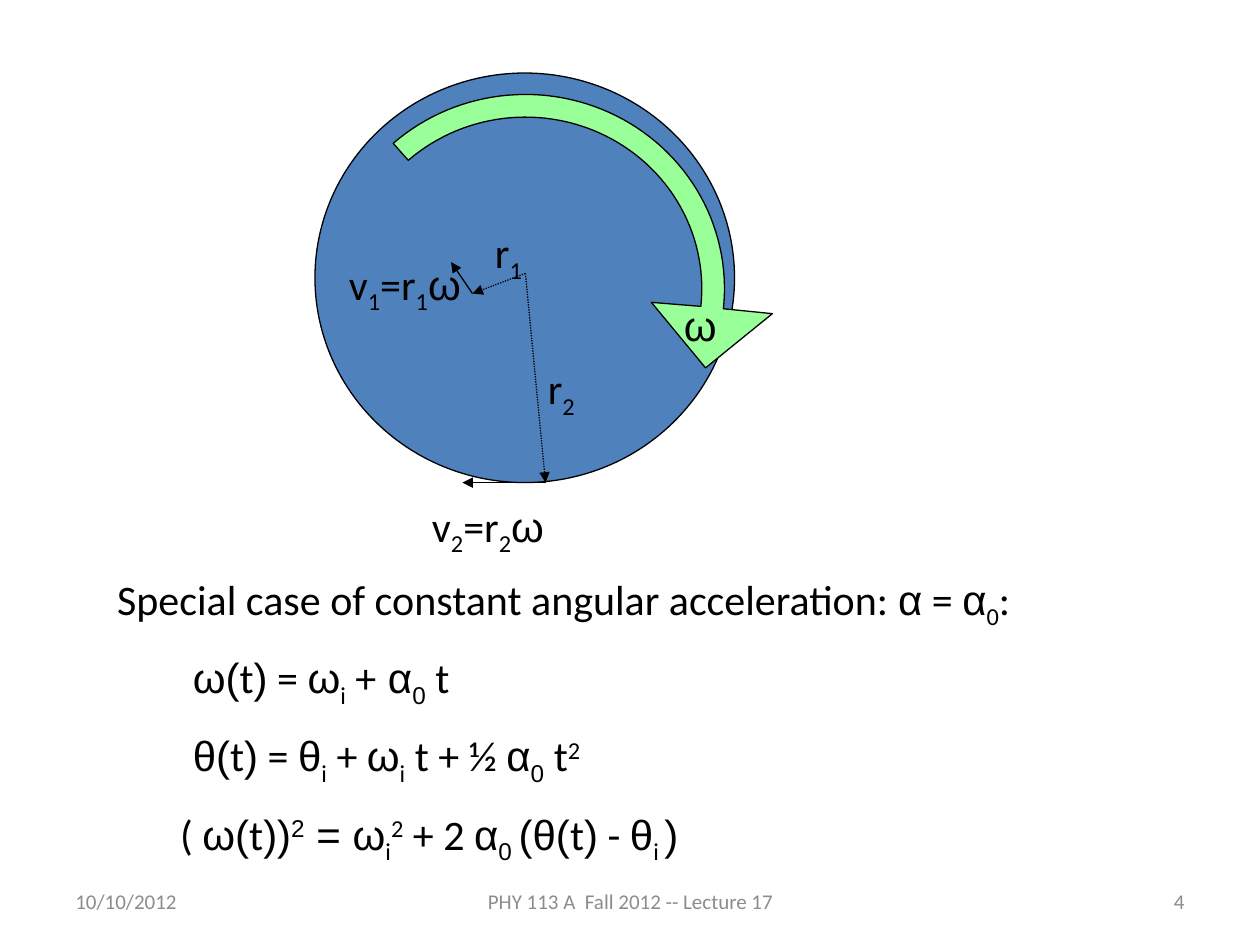
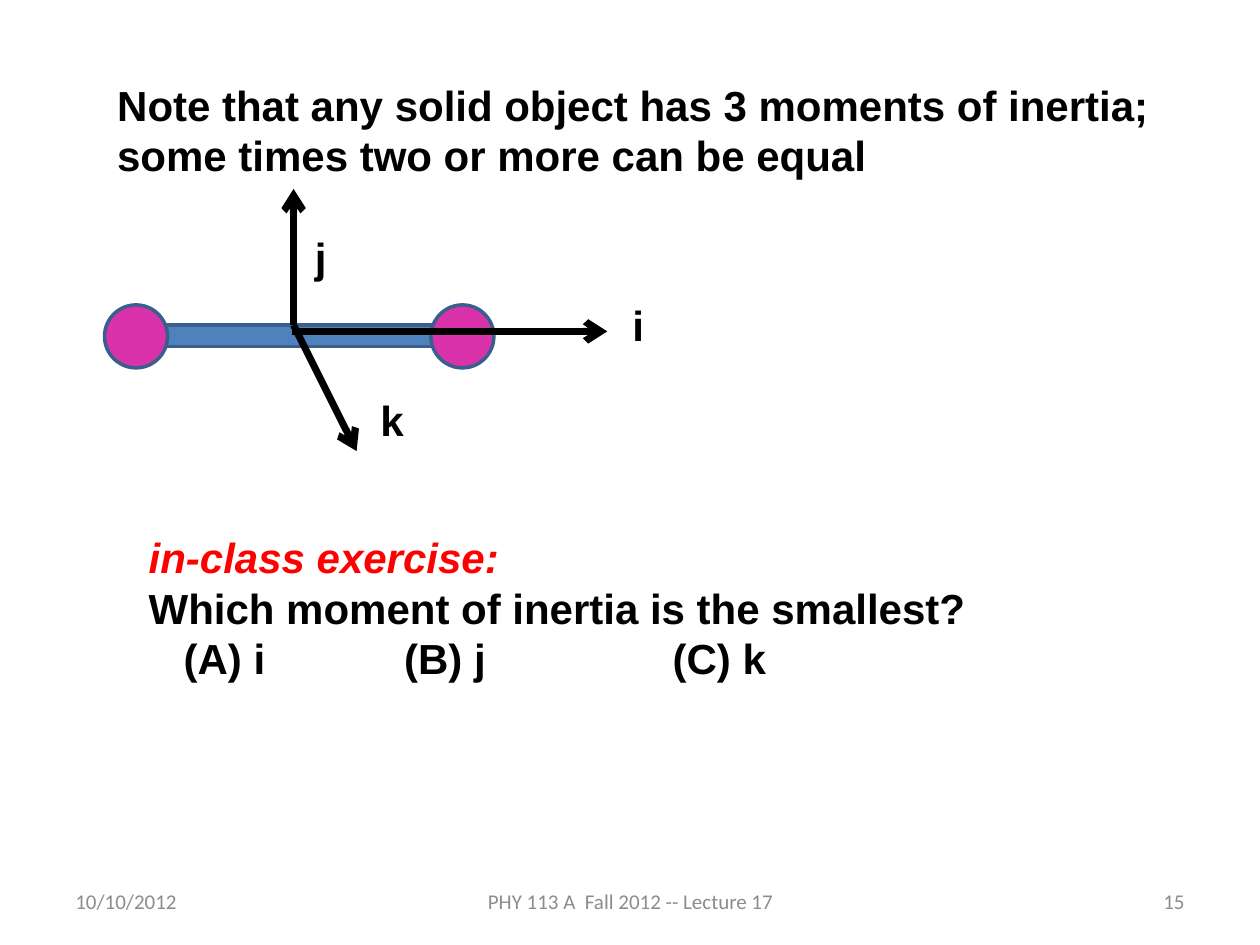
from math import cos, radians, sin

from lxml.etree import SubElement
from pptx import Presentation
from pptx.dml.color import RGBColor
from pptx.enum.dml import MSO_LINE
from pptx.enum.shapes import MSO_CONNECTOR, MSO_SHAPE
from pptx.enum.text import MSO_ANCHOR, MSO_AUTO_SIZE, PP_ALIGN
from pptx.oxml.ns import qn
from pptx.util import Inches, Pt

BLACK, RED, GRAY = "000000", "FF0000", "8C8C8C"
BLUE, NAVY, GREEN, PINK = "4F81BD", "3A5F8C", "99FF99", "DA32AA"
TEXT_FONT, GREEK_FONT = "Calibri", "Arial"
BASELINES = {"_": "-25000", "^": "30000"}
FOOTERS = [
    (0.5, 2.33, PP_ALIGN.LEFT),
    (3.42, 3.17, PP_ALIGN.CENTER),
    (7.17, 2.33, PP_ALIGN.RIGHT),
]
EQUATIONS = [
    (0, "Special case of constant angular acceleration: |*α| = |*α|_0|:"),
    (0.6, "*ω(|t|*)| = |*ω|_i| +|* α|*_0| t"),
    (0.6, "*θ(|t|*)| = |*θ|_i| + |*ω|_i| t + ½ |*α|*_0| t|^2"),
    (0.5, "( |*ω(|t|*))|*^2|* = ω|_i|^2| + 2 |*α|*_0 |*(θ(|t|*)| - |*θ|_i |*)"),
]


def color(hex_code):
    return RGBColor.from_string(hex_code)


def style_runs(para, font_name, size, ink, bold=False, italic=False):
    for span in para.runs:
        font = span.font
        font.name, font.size = font_name, Pt(size)
        font.bold, font.italic = bold, italic
        font.color.rgb = color(ink)


def write_formula(para, markup):
    for part in markup.split("|"):
        content = part.lstrip("*_^")
        marks = part[:len(part) - len(content)]
        span = para.add_run()
        span.text = content
        span.font.name = GREEK_FONT if "*" in marks else TEXT_FONT
        span.font.size = Pt(24)
        span.font.color.rgb = color(BLACK)
        for mark in marks.replace("*", ""):
            span.font._element.set("baseline", BASELINES[mark])


def place(shape, left, top, width, height):
    shape.left, shape.top = Inches(left), Inches(top)
    shape.width, shape.height = Inches(width), Inches(height)
    frame = shape.text_frame
    frame.word_wrap = True
    frame.auto_size = MSO_AUTO_SIZE.NONE
    frame.vertical_anchor = MSO_ANCHOR.TOP
    return frame


def plain_list_item(para, indent=0, space=0):
    para.space_before = Pt(space)
    props = para._p.get_or_add_pPr()
    props.set("marL", str(Inches(indent)))
    props.set("indent", "0")
    SubElement(props, qn("a:buNone"))


def add_label(page, left, top, width, height=0.5):
    box = page.shapes.add_textbox(0, 0, 0, 0)
    return place(box, left, top, width, height)


def add_formula_label(page, left, top, width, markup):
    write_formula(add_label(page, left, top, width).paragraphs[0], markup)


def add_bold_label(page, left, top, width, text):
    para = add_label(page, left, top, width).paragraphs[0]
    para.text = text
    style_runs(para, GREEK_FONT, 24, BLACK, bold=True)


def add_footers(page, number):
    texts = ("10/10/2012", "PHY 113 A  Fall 2012 -- Lecture 17", number)
    for (left, width, align), text in zip(FOOTERS, texts):
        frame = add_label(page, left, 6.95, width, 0.4)
        frame.vertical_anchor = MSO_ANCHOR.MIDDLE
        para = frame.paragraphs[0]
        para.text, para.alignment = text, align
        style_runs(para, TEXT_FONT, 12, GRAY)


def paint(shape, fill, ink, weight):
    shape.shadow.inherit = False
    shape.fill.solid()
    shape.fill.fore_color.rgb = color(fill)
    shape.line.color.rgb = color(ink)
    shape.line.width = Pt(weight)


def add_solid(shapes, kind, left, top, width, height, fill, ink, weight):
    solid = shapes.add_shape(kind, Inches(left), Inches(top), Inches(width), Inches(height))
    paint(solid, fill, ink, weight)
    return solid


def add_arrow(shapes, start, end, weight, head, dash=None):
    arrow = shapes.add_connector(
        MSO_CONNECTOR.STRAIGHT, *[Inches(value) for value in (*start, *end)])
    arrow.line.color.rgb = color(BLACK)
    arrow.line.width = Pt(weight)
    if dash:
        arrow.line.dash_style = dash
    SubElement(arrow.line._get_or_add_ln(), qn("a:tailEnd"), type=head)
    SubElement(arrow._element.spPr, qn("a:effectLst"))
    return arrow


def arc(center, radius_x, radius_y, start, end, steps=60):
    for step in range(steps + 1):
        angle = radians(start + (end - start) * step / steps)
        yield center[0] + radius_x * cos(angle), center[1] + radius_y * sin(angle)


def add_rotation_arrow(page, left, top):
    center = (left + 1.67, top + 1.71)
    head = [(left + x, top + y) for x, y in ((3.63, 1.91), (3.1, 2.34), (2.67, 1.82))]
    outline = [
        *arc(center, 1.58, 1.54, -131.6, 6),
        *head,
        *arc(center, 1.4, 1.36, 6, -131.6),
    ]
    points = [(Inches(x), Inches(y)) for x, y in outline]
    builder = page.shapes.build_freeform(*points[0])
    builder.add_line_segments(points[1:], close=True)
    paint(builder.convert_to_shape(), GREEN, BLACK, 0.75)


def add_rotating_disk(page, left, top):
    add_solid(page.shapes, MSO_SHAPE.OVAL, left, top, 3.33, 3.25, BLUE, BLACK, 0.75)
    add_rotation_arrow(page, left, top)
    add_formula_label(page, left + 2.83, top + 1.75, 0.67, "*ω")
    axis = (left + 1.67, top + 1.59)
    inner = (left + 1.25, top + 1.75)
    rim = (left + 1.83, top + 3.25)
    for point, velocity_tip in (
        (inner, (left + 1.08, top + 1.5)),
        (rim, (left + 1.17, top + 3.25)),
    ):
        add_arrow(page.shapes, axis, point, 0.75, "triangle", MSO_LINE.ROUND_DOT)
        add_arrow(page.shapes, point, velocity_tip, 0.75, "triangle")
    for x, y, width, markup in (
        (1.33, 1.17, 0.67, "r|_1"),
        (0.17, 1.42, 1.58, "v|_1|=r|_1|*ω"),
        (0.83, 3.34, 1.58, "v|_2|=r|_2|*ω"),
        (1.75, 2.25, 0.67, "r|_2"),
    ):
        add_formula_label(page, left + x, top + y, width, markup)


def add_equations(body, left, top, width, height):
    frame = place(body, left, top, width, height)
    for row, (indent, markup) in enumerate(EQUATIONS):
        para = frame.add_paragraph() if row else frame.paragraphs[0]
        plain_list_item(para, indent, 12 if row else 0)
        write_formula(para, markup)


def add_dumbbell(page, left, top):
    shapes = page.shapes.add_group_shape().shapes
    rod = add_solid(shapes, MSO_SHAPE.RECTANGLE, left + 0.25, top + 0.16, 2.5, 0.17, BLUE, NAVY, 2)
    for x in (2.59, 0):
        add_solid(shapes, MSO_SHAPE.OVAL, left + x, top, 0.5, 0.5, PINK, NAVY, 2)
    origin = (left + 1.5, top + 0.16)
    for tip in ((left + 1.5, top - 0.92), (left + 2, top + 1.16)):
        add_arrow(shapes, origin, tip, 4, "arrow").begin_connect(rod, 0)
    add_arrow(shapes, (left + 1.49, top + 0.21), (left + 3.99, top + 0.21), 4, "arrow")
    for x, y, name in ((1.57, -0.63, "j"), (4.09, -0.09, "i"), (2.09, 0.66, "k")):
        add_bold_label(page, left + x, top + y, 0.58, name)


def add_note(title, left, top, width, height):
    para = place(title, left, top, width, height).paragraphs[0]
    para.text = ("Note that any solid object has 3 moments of inertia; "
                 "some times two or more can be equal")
    para.alignment = PP_ALIGN.LEFT
    style_runs(para, GREEK_FONT, 24, BLACK, bold=True)


def add_question(page, body, left, top, width, height):
    frame = place(body, left, top, width, height)
    frame.text = "in-class exercise:\nWhich moment of inertia is the smallest?"
    heading, question = frame.paragraphs
    for para in (heading, question):
        plain_list_item(para)
    style_runs(heading, GREEK_FONT, 24, RED, bold=True, italic=True)
    style_runs(question, GREEK_FONT, 24, BLACK, bold=True)
    for x, choice in ((0.28, "(A) i"), (2.03, "(B) j"), (4.16, "(C) k")):
        add_bold_label(page, left + x, top + 0.8, 1.2, choice)


def build_rotation_slide(deck):
    page = deck.slides.add_slide(deck.slide_layouts[1])
    title, body = page.placeholders
    title._element.getparent().remove(title._element)
    add_footers(page, "4")
    add_equations(body, 0.83, 4.5, 8.92, 2.32)
    add_rotating_disk(page, 2.5, 0.58)


def build_inertia_slide(deck):
    page = deck.slides.add_slide(deck.slide_layouts[1])
    title, body = page.placeholders
    add_footers(page, "15")
    add_note(title, 0.83, 0.58, 8.67, 0.91)
    add_dumbbell(page, 0.83, 2.42)
    add_question(page, body, 1.08, 4.17, 7.33, 0.91)


def main():
    deck = Presentation()
    deck.slide_width, deck.slide_height = Inches(10), Inches(7.5)
    build_rotation_slide(deck)
    build_inertia_slide(deck)
    deck.save("out.pptx")


if __name__ == "__main__":
    main()
